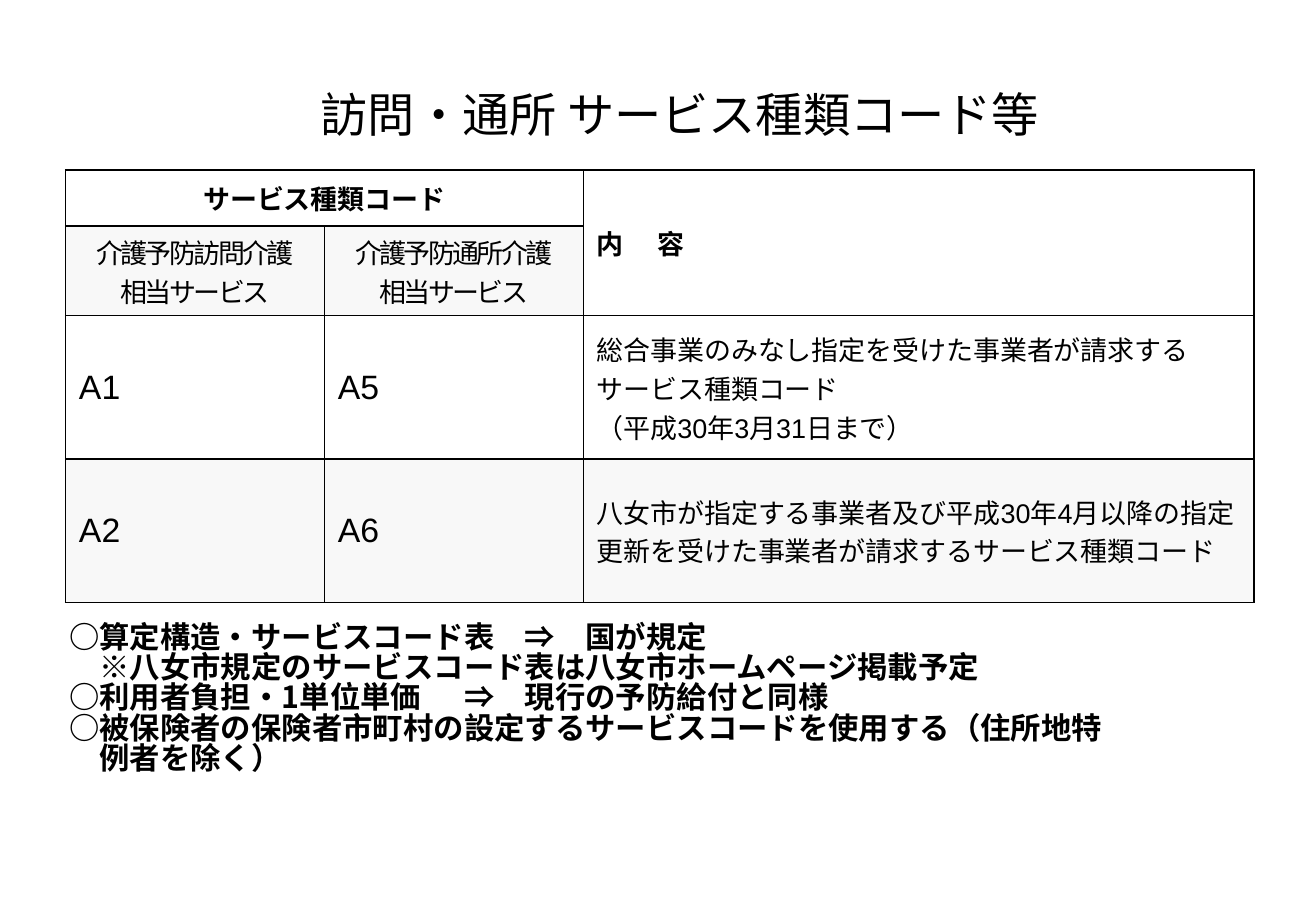
from lxml import etree
from pptx import Presentation, util as u
from pptx.dml.color import RGBColor
from pptx.enum import text
from pptx.oxml.ns import qn

LEFT, CENTER = text.PP_ALIGN.LEFT, text.PP_ALIGN.CENTER


def rgb(value):
    return RGBColor.from_string(value)


def set_attrs(obj, values):
    for name, value in values.items():
        setattr(obj, name, value)


class SlideBuilder:
    ink = "000000"
    shade = "F8F8F8"
    cell_format = {
        "vertical_anchor": text.MSO_ANCHOR.MIDDLE,
        "margin_left": u.Inches(0.11), "margin_right": u.Inches(0.11),
        "margin_top": u.Inches(0.05), "margin_bottom": u.Inches(0.05),
    }

    def __init__(self, slide):
        self.s = slide

    def paragraph(self, p, content, font, size, bold=False, align=LEFT,
                  indent=0, hanging=0, tabs=(), spacing=None, tracking=0):
        """Fill one paragraph; indents and tab stops are in inches, tracking in points."""
        set_attrs(p, {"text": content, "alignment": align, "line_spacing": spacing})
        pPr = p._p.get_or_add_pPr()
        pPr.set("marL", str(u.Inches(indent)))
        pPr.set("indent", str(u.Inches(-hanging)))
        if tabs:
            stops = etree.SubElement(pPr, qn("a:tabLst"))
            for pos in tabs:
                etree.SubElement(stops, qn("a:tab"), pos=str(u.Inches(pos)), algn="l")
        for r in p.runs:
            set_attrs(r.font, {"name": font, "size": u.Pt(size), "bold": bold})
            r.font.color.rgb = rgb(self.ink)
            rPr = r._r.get_or_add_rPr()
            if font.startswith("Noto"):
                etree.SubElement(rPr, qn("a:ea"), typeface=font)
            if tracking:
                rPr.set("spc", str(int(tracking * 100)))

    def paragraphs(self, tf, items, **style):
        """Write each (content, own format) pair as a paragraph with a shared style."""
        for i, (content, own) in enumerate(items):
            p = tf.add_paragraph() if i else tf.paragraphs[0]
            self.paragraph(p, content, **{**style, **own})

    def textbox(self, box, items, anchor, **style):
        tf = self.s.shapes.add_textbox(*map(u.Inches, box)).text_frame
        set_attrs(tf, {"word_wrap": True, "vertical_anchor": anchor})
        self.paragraphs(tf, items, **style)

    def border(self, cell):
        tcPr = cell._tc.get_or_add_tcPr()
        for side in ("lnL", "lnR", "lnT", "lnB"):
            ln = etree.SubElement(tcPr, qn(f"a:{side}"), w=str(u.Pt(1)))
            fill = etree.SubElement(ln, qn("a:solidFill"))
            etree.SubElement(fill, qn("a:srgbClr"), val=self.ink)

    def table(self, box, widths, heights, merges, shaded, cells):
        """Draw a bordered table; cells maps (row, column) to (lines, format)."""
        table = self.s.shapes.add_table(len(heights), len(widths), *map(u.Inches, box)).table
        set_attrs(table, {"first_row": False, "horz_banding": False})
        for col, width in zip(table.columns, widths):
            col.width = u.Inches(width)
        for row, height in zip(table.rows, heights):
            row.height = u.Inches(height)
        for start, end in merges:
            table.cell(*start).merge(table.cell(*end))
        for i in range(len(heights)):
            for j in range(len(widths)):
                cell = table.cell(i, j)
                set_attrs(cell, self.cell_format)
                self.border(cell)
                if (i, j) in shaded:
                    cell.fill.solid()
                    cell.fill.fore_color.rgb = rgb(self.shade)
                else:
                    cell.fill.background()
                if (i, j) in cells:
                    lines, style = cells[i, j]
                    items = [(line, {}) for line in lines]
                    self.paragraphs(cell.text_frame, items, font="Arial", **style)


def main():
    prs = Presentation()
    prs.slide_width, prs.slide_height = u.Inches(10.83), u.Inches(7.5)
    b = SlideBuilder(prs.slides.add_slide(prs.slide_layouts[6]))

    b.textbox((0.72, 0.47, 9.75, 0.93), [("訪問・通所 サービス種類コード等", {})],
              text.MSO_ANCHOR.MIDDLE, font="Calibri", size=28, align=CENTER)

    head = {"size": 16, "bold": True}
    service = {"size": 16, "align": CENTER, "tracking": -1.5}
    code, body = {"size": 20}, {"size": 16}
    b.table(
        (0.54, 1.4, 9.79, 3.53), (2.13, 2.13, 5.52), (0.46, 0.74, 1.18, 1.18),
        merges=[((0, 0), (0, 1)), ((0, 2), (1, 2))],
        shaded={(1, 0), (1, 1), (3, 0), (3, 1), (3, 2)},
        cells={
            (0, 0): (["サービス種類コード"], {**head, "align": CENTER}),
            (0, 2): (["内\t容"], {**head, "tabs": (0.67,)}),
            (1, 0): (["介護予防訪問介護", "相当サービス"], service),
            (1, 1): (["介護予防通所介護", "相当サービス"], service),
            (2, 0): (["A1"], code),
            (2, 1): (["A5"], code),
            (2, 2): (["総合事業のみなし指定を受けた事業者が請求するサービス種類コード",
                      "（平成30年3月31日まで）"], body),
            (3, 0): (["A2"], code),
            (3, 1): (["A6"], code),
            (3, 2): (["八女市が指定する事業者及び平成30年4月以降の"
                      "指定更新を受けた事業者が請求するサービス種類コード"], body),
        })

    circled = {"indent": 0.25, "hanging": 0.25}
    b.textbox(
        (0.47, 5.09, 9.75, 1.88),
        [("○算定構造・サービスコード表\t⇒\t国が規定", {**circled, "tabs": (4.47, 4.9)}),
         ("※八女市規定のサービスコード表は八女市ホームページ掲載予定", {"indent": 0.25}),
         ("○利用者負担・1単位単価\t⇒\t現行の予防給付と同様", {**circled, "tabs": (4.63, 5.13)}),
         ("○被保険者の保険者市町村の設定するサービスコードを使用する（住所地特\v例者を除く）",
          circled)],
        text.MSO_ANCHOR.TOP, font="Noto Sans CJK JP", size=18, bold=True, spacing=0.83)

    prs.save("out.pptx")


if __name__ == "__main__":
    main()
